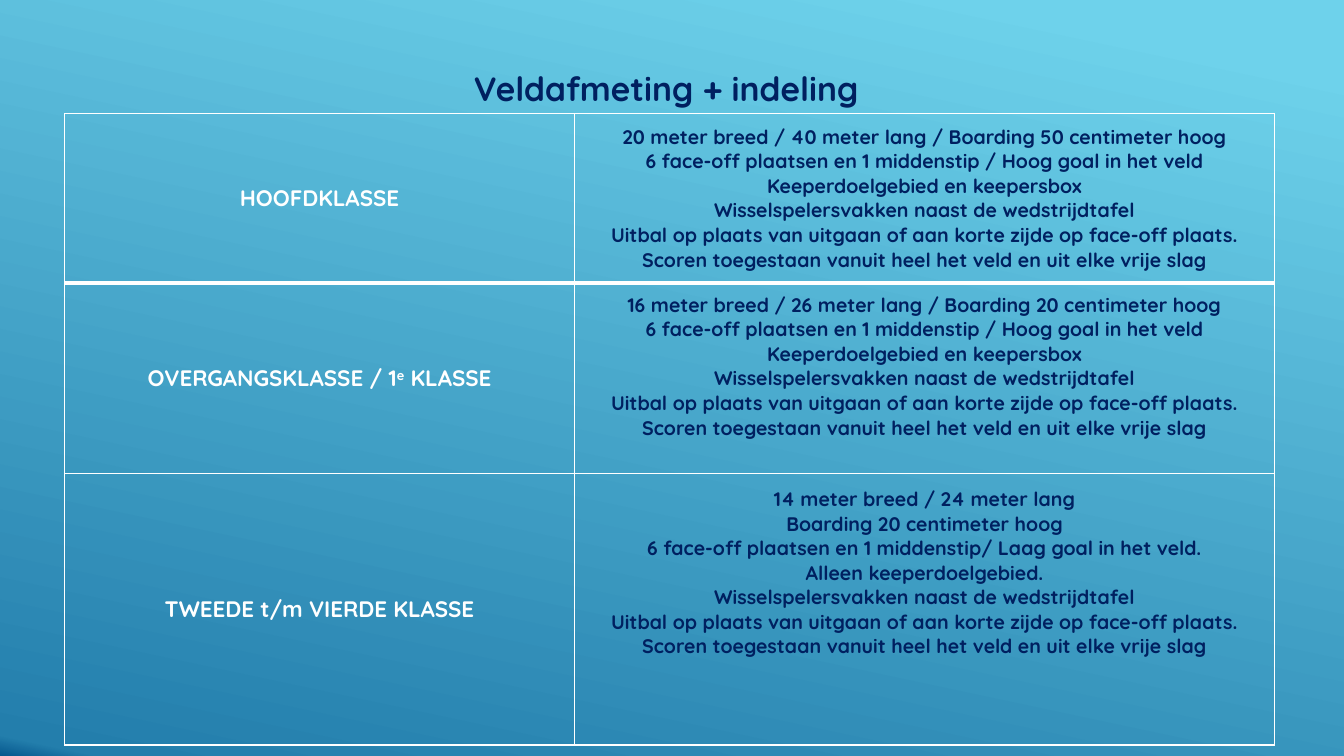
from dataclasses import dataclass

from lxml import etree
from pptx import Presentation
from pptx.dml.color import RGBColor
from pptx.enum.text import MSO_ANCHOR, MSO_AUTO_SIZE, PP_ALIGN
from pptx.oxml.ns import qn
from pptx.util import Pt

MIDDLE = MSO_ANCHOR.MIDDLE
CENTER = PP_ALIGN.CENTER
NO_AUTOFIT = MSO_AUTO_SIZE.NONE


@dataclass(frozen=True)
class Theme:
    font: str = "Quicksand"
    navy: str = "002060"
    white: str = "FFFFFF"
    gradient: tuple = ((7, "6ED2EB"), (98, "237EAC"), (100, "06588E"))
    gradient_angle: int = 102
    title_size: int = 24
    class_size: int = 16
    rule_size: int = 14
    rule_line: float = 17.5
    cell_margin: float = 3.6
    thin: int = 1
    thick: int = 3


THEME = Theme()

FACE_OFF = "6 face-off plaatsen en 1 middenstip / Hoog goal in het veld"
KEEPER = "Keeperdoelgebied en keepersbox"
PLAY_RULES = (
    "Wisselspelersvakken naast de wedstrijdtafel",
    "Uitbal op plaats van uitgaan of aan korte zijde op face-off plaats.",
    "Scoren toegestaan vanuit heel het veld en uit elke vrije slag",
)


@dataclass(frozen=True)
class League:
    name_parts: tuple
    rules: tuple
    height: float
    lines_below: int


LEAGUES = (
    League(
        ("HOOFDKLASSE",),
        ("20 meter breed / 40 meter lang / Boarding 50 centimeter hoog",
         FACE_OFF, KEEPER, *PLAY_RULES),
        121.3, 0),
    League(
        ("OVERGANGSKLASSE / 1", "e", " KLASSE"),
        ("16 meter breed / 26 meter lang / Boarding 20 centimeter hoog",
         FACE_OFF, KEEPER, *PLAY_RULES),
        136.2, 1),
    League(
        ("TWEEDE t/m VIERDE KLASSE",),
        ("14 meter breed / 24 meter lang",
         "Boarding 20 centimeter hoog",
         "6 face-off plaatsen en 1 middenstip/ Laag goal in het veld.",
         "Alleen keeperdoelgebied.", *PLAY_RULES),
        193.7, 3),
)


def format_paragraph(paragraph, size, color):
    paragraph.alignment = CENTER
    for run in paragraph.runs:
        run.font.name = THEME.font
        run.font.size = Pt(size)
        run.font.bold = True
        run.font.color.rgb = RGBColor.from_string(color)


def paint_background(slide):
    fill = slide.background.fill
    fill.gradient()
    gradient = slide.background._cSld.find(".//" + qn("a:gradFill"))
    for child in list(gradient):
        gradient.remove(child)
    stops = etree.SubElement(gradient, qn("a:gsLst"))
    for position, color in THEME.gradient:
        stop = etree.SubElement(stops, qn("a:gs"), pos=str(position * 1000))
        etree.SubElement(stop, qn("a:srgbClr"), val=color)
    etree.SubElement(gradient, qn("a:lin"),
                     ang=str(THEME.gradient_angle * 60000), scaled="0")


def place_title(slide, left, top, width, height):
    title = slide.shapes.title
    title.left, title.top = Pt(left), Pt(top)
    title.width, title.height = Pt(width), Pt(height)
    frame = title.text_frame
    frame.text = "Veldafmeting + indeling"
    frame.word_wrap = True
    frame.auto_size = NO_AUTOFIT
    frame.vertical_anchor = MIDDLE
    format_paragraph(frame.paragraphs[0], THEME.title_size, THEME.navy)


def set_borders(cell, top, bottom):
    widths = (("a:lnL", THEME.thin), ("a:lnR", THEME.thin),
              ("a:lnT", top), ("a:lnB", bottom))
    properties = cell._tc.get_or_add_tcPr()
    for index, (side, width) in enumerate(widths):
        border = etree.Element(qn(side), w=str(Pt(width)))
        fill = etree.SubElement(border, qn("a:solidFill"))
        etree.SubElement(fill, qn("a:srgbClr"), val=THEME.white)
        properties.insert(index, border)


def fill_name(cell, parts):
    paragraph = cell.text_frame.paragraphs[0]
    for index, part in enumerate(parts):
        run = paragraph.add_run()
        run.text = part
        if index % 2:
            run._r.get_or_add_rPr().set("baseline", "30000")
    format_paragraph(paragraph, THEME.class_size, THEME.white)


def fill_rules(cell, league):
    cell.text_frame.text = "\n".join(league.rules)
    cell.margin_bottom = Pt(THEME.cell_margin + league.lines_below * THEME.rule_line)
    for paragraph in cell.text_frame.paragraphs:
        format_paragraph(paragraph, THEME.rule_size, THEME.navy)


def place_league_table(slide, left, top, width, name_width):
    height = sum(league.height for league in LEAGUES)
    table = slide.shapes.add_table(
        len(LEAGUES), 2, Pt(left), Pt(top), Pt(width), Pt(height)).table
    table.first_row = False
    table.horz_banding = False
    table.columns[0].width = Pt(name_width)
    table.columns[1].width = Pt(width - name_width)
    for index, league in enumerate(LEAGUES):
        table.rows[index].height = Pt(league.height)
        name_cell, rules_cell = table.rows[index].cells
        fill_name(name_cell, league.name_parts)
        fill_rules(rules_cell, league)
        for cell in (name_cell, rules_cell):
            cell.vertical_anchor = MIDDLE
            cell.fill.background()
            set_borders(cell,
                        THEME.thick if index == 1 else THEME.thin,
                        THEME.thick if index == 0 else THEME.thin)


def main():
    deck = Presentation()
    deck.slide_width, deck.slide_height = Pt(960), Pt(540)
    slide = deck.slides.add_slide(deck.slide_layouts.get_by_name("Title Only"))
    paint_background(slide)
    place_title(slide, 298, 44.8, 355.6, 36)
    place_league_table(slide, 46.2, 81, 864.4, 364.2)
    deck.save("out.pptx")


if __name__ == "__main__":
    main()
